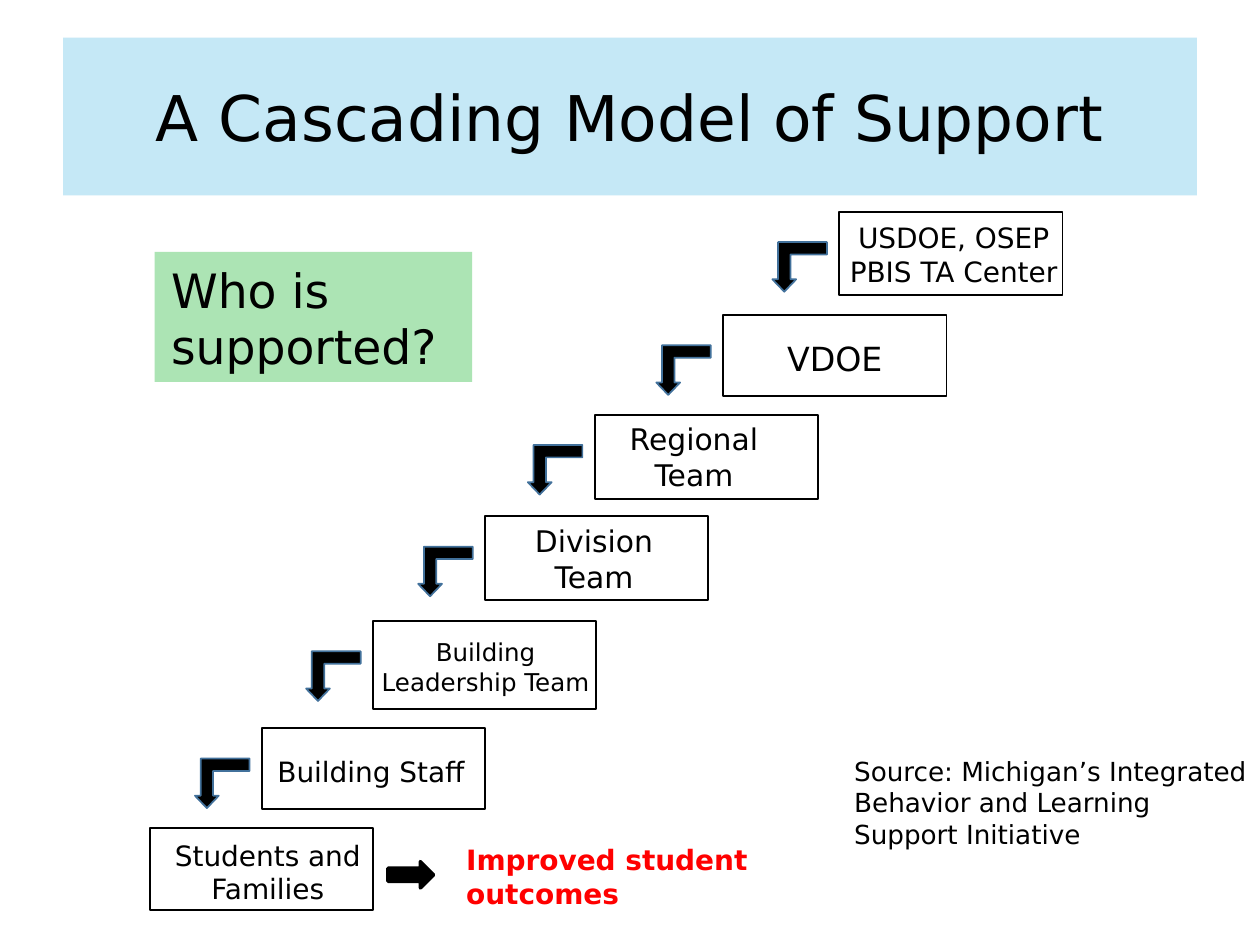
from pptx import Presentation
from pptx import util as u
from pptx.dml.color import RGBColor
from pptx.enum import shapes, text

BLACK = RGBColor(0x00, 0x00, 0x00)
RED = RGBColor(0xFF, 0x00, 0x00)
SKY = RGBColor(0xC5, 0xE8, 0xF6)
MINT = RGBColor(0xAC, 0xE4, 0xB4)
STEEL = RGBColor(0x42, 0x71, 0x9B)
FONT = "DejaVu Sans"
KIND = shapes.MSO_SHAPE
ALIGN = text.PP_ALIGN
ANCHOR = text.MSO_ANCHOR
STEP_W = 4.5

# label, box (left, top, height), label (shift x, shift y, width, height), size
STEPS = [
    ("USDOE, OSEP PBIS TA Center", (16.92, 4.27, 1.68), (-0.25, 0, 5.11, 1.7), 16),
    ("VDOE", (14.58, 6.35, 1.63), (0, 0.28, 4.5, 1.14), 19),
    ("Regional Team", (11.99, 8.36, 1.7), (-0.25, -0.05, 4.5, 1.83), 17),
    ("Division Team", (9.78, 10.41, 1.68), (0.25, -0.05, 3.89, 1.83), 17),
    ("Building Leadership Team", (7.52, 12.52, 1.78), (-0.36, 0.15, 5.26, 1.6), 14),
    ("Building Staff", (5.28, 14.68, 1.63), (-0.05, 0.36, 4.5, 1.02), 16),
    ("Students and Families", (3.02, 16.69, 1.65), (0.13, 0.03, 4.5, 1.7), 16),
]


def cms(box):
    """Turn a box in centimetres into lengths."""
    return [u.Cm(n) for n in box]


def write(shape, words, size=16, color=BLACK, bold=False,
          align=ALIGN.LEFT, anchor=ANCHOR.TOP):
    """Put formatted text into a shape."""
    frame = shape.text_frame
    frame.word_wrap = True
    frame.auto_size = text.MSO_AUTO_SIZE.NONE
    frame.vertical_anchor = anchor
    frame.margin_left = frame.margin_right = u.Cm(0.33)
    frame.margin_top = frame.margin_bottom = u.Cm(0.18)
    para = frame.paragraphs[0]
    para.alignment = align
    run = para.add_run()
    run.text = words
    font = run.font
    font.name, font.size, font.bold = FONT, u.Pt(size), bold
    font.color.rgb = color


def label(slide, box, words, **form):
    """Add a text box with formatted text."""
    write(slide.shapes.add_textbox(*cms(box)), words, **form)


def draw(slide, kind, box, fill=None, line=None, width=1):
    """Add a flat preset shape."""
    shape = slide.shapes.add_shape(kind, *cms(box))
    shape.shadow.inherit = False
    if fill is None:
        shape.fill.background()
    else:
        shape.fill.solid()
        shape.fill.fore_color.rgb = fill
    if line is None:
        shape.line.fill.background()
    else:
        shape.line.color.rgb = line
        shape.line.width = u.Pt(width)
    return shape


def head(slide, box):
    """Place the title band."""
    title = slide.shapes.title
    title.left, title.top, title.width, title.height = cms(box)
    title.fill.solid()
    title.fill.fore_color.rgb = SKY
    write(title, "A Cascading Model of Support", size=36,
          align=ALIGN.CENTER, anchor=ANCHOR.MIDDLE)


def step(slide, box, words, spot, size, arrow):
    """Place one step with its label and the arrow to the next step."""
    left, top, _ = box
    draw(slide, KIND.RECTANGLE, (left, top, STEP_W, box[2]), line=BLACK)
    dx, dy, wide, high = spot
    label(slide, (left + dx, top + dy, wide, high), words,
          size=size, align=ALIGN.CENTER)
    if arrow:
        bend = draw(slide, KIND.BENT_UP_ARROW,
                    (left - 1.35, top + 0.61, 1.1, 1), BLACK, STEEL)
        bend.rotation = 180
        bend.adjustments[1] = 0.24


def result(slide, left, top):
    """Place the outcome arrow and its text."""
    draw(slide, KIND.RIGHT_ARROW, (left, top + 0.56, 0.92, 0.53),
         BLACK, BLACK, 2)
    label(slide, (left + 1.25, top, 6.45, 1.7), "Improved student outcomes",
          color=RED, bold=True)


def main():
    """Build and save the slide."""
    deck = Presentation()
    deck.slide_width, deck.slide_height = u.Cm(25.4), u.Cm(19.05)
    slide = deck.slides.add_slide(deck.slide_layouts.get_by_name("Title Only"))
    head(slide, (1.27, 0.76, 22.86, 3.18))
    for words, box, spot, size in STEPS:
        step(slide, box, words, spot, size, words != STEPS[-1][0])
    ask = draw(slide, KIND.RECTANGLE, (3.12, 5.08, 6.4, 2.62), MINT)
    write(ask, "Who is supported?", size=27)
    result(slide, 7.82, 16.81)
    label(slide, (16.89, 15.04, 8.66, 2.24),
          "Source: Michigan’s Integrated Behavior and Learning "
          "Support Initiative", size=15)
    deck.save("out.pptx")


if __name__ == "__main__":
    main()
